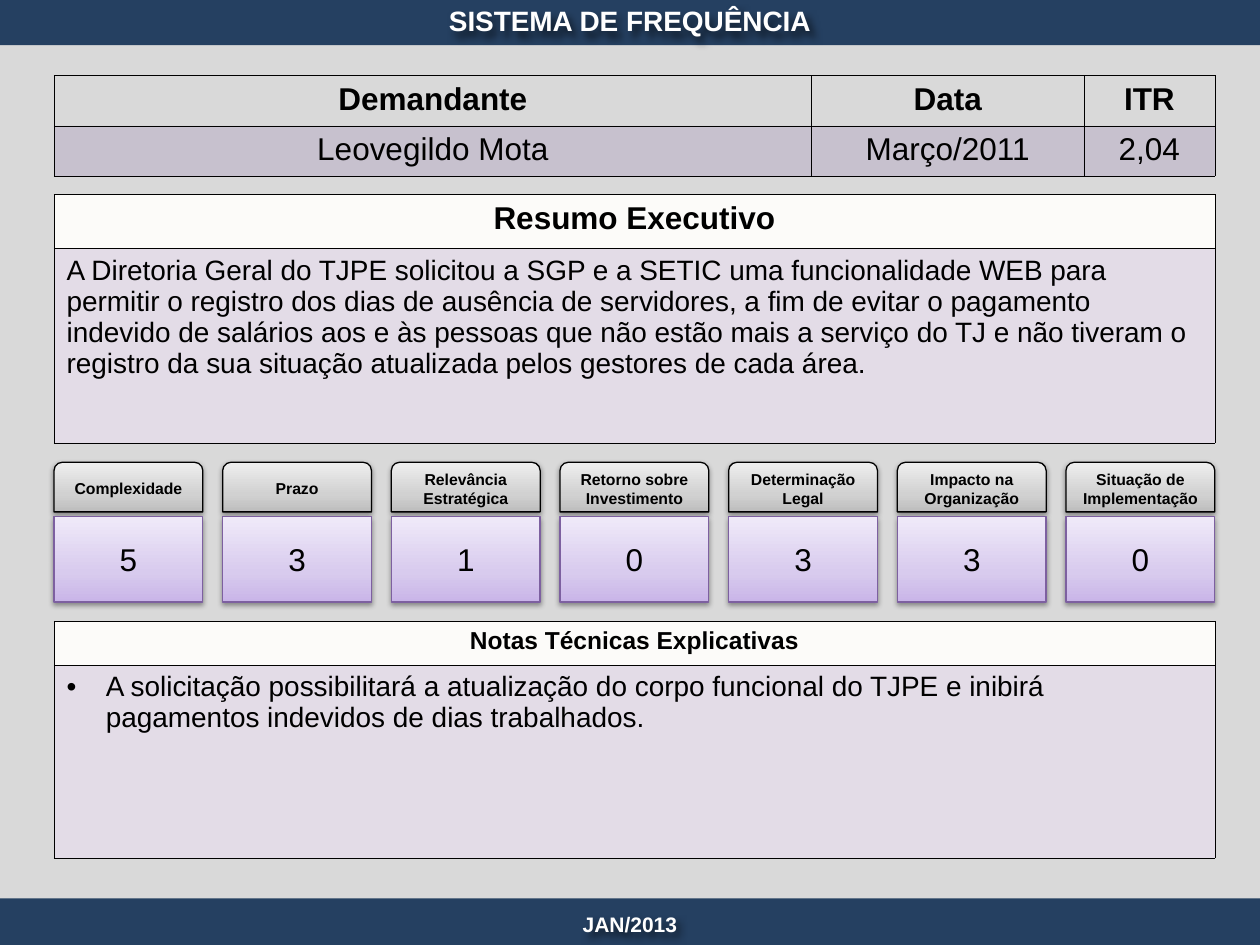
from dataclasses import dataclass

from lxml import etree
from pptx import Presentation
from pptx import util as u
from pptx.dml import color
from pptx.enum import shapes, text
from pptx.oxml import ns


@dataclass(frozen=True)
class Theme:
    font: str = "Arial"
    bar: str = "254061"
    page: str = "D9D9D9"
    panel: str = "FCFBF9"
    ink: str = "000000"
    light: str = "FFFFFF"
    tint: str = "8064A2"
    score_line: str = "7D60A0"
    label_stops: tuple = ((0, "BDBDBD"), (35, "D1D1D1"), (100, "EEEEEE"))
    score_stops: tuple = ((0, "C9B5E8"), (35, "D8CBEE"), (100, "F0EAF9"))
    heading: int = 18
    body: int = 16
    subheading: int = 14
    footer: int = 12
    label: int = 9


T = Theme()
LEFT, WIDTH = 1.09, 23.4
SUMMARY = (
    "A Diretoria Geral do TJPE solicitou a SGP e a SETIC uma funcionalidade WEB "
    "para permitir o registro dos dias de ausência de servidores, a fim de evitar "
    "o pagamento indevido de salários aos e às pessoas que não estão mais a "
    "serviço do TJ e não tiveram o registro da sua situação atualizada pelos "
    "gestores de cada área."
)
NOTE = (
    "A solicitação possibilitará a atualização do corpo funcional do TJPE e "
    "inibirá pagamentos indevidos de dias trabalhados."
)
SCORES = [
    ("Complexidade", "5"),
    ("Prazo", "3"),
    ("Relevância Estratégica", "1"),
    ("Retorno sobre Investimento", "0"),
    ("Determinação Legal", "3"),
    ("Impacto na Organização", "3"),
    ("Situação de Implementação", "0"),
]


def rgb(value):
    return color.RGBColor.from_string(value)


def sub(parent, tag, **attrs):
    el = etree.SubElement(parent, ns.qn(tag))
    for name, value in attrs.items():
        el.set(name, str(value))
    return el


def write(tf, content, size, ink=T.ink, bold=False, centred=True, bullet=False):
    p = tf.paragraphs[0]
    p.alignment = text.PP_ALIGN.CENTER if centred else text.PP_ALIGN.LEFT
    if bullet:
        pPr = p._p.get_or_add_pPr()
        pPr.set("marL", str(u.Cm(0.79)))
        pPr.set("indent", str(u.Cm(-0.79)))
        sub(pPr, "a:buFont", typeface=T.font)
        sub(pPr, "a:buChar", char="•")
    r = p.add_run()
    r.text = content
    r.font.color.rgb = rgb(ink)
    for name, value in {"name": T.font, "size": u.Pt(size), "bold": bold}.items():
        setattr(r.font, name, value)


def add_shadow(s, blur, dist, angle, opacity):
    s.shadow.inherit = False
    effects = s._element.spPr.find(ns.qn("a:effectLst"))
    shadow = sub(effects, "a:outerShdw", blurRad=u.Pt(blur), dist=u.Pt(dist),
                 dir=angle * 60000, algn="t", rotWithShape=0)
    sub(sub(shadow, "a:srgbClr", val="000000"), "a:alpha", val=opacity * 1000)


def add_rect(slide, left, top, width, height, fill):
    s = slide.shapes.add_shape(shapes.MSO_SHAPE.RECTANGLE, *map(u.Cm, (left, top, width, height)))
    s.shadow.inherit = False
    s.fill.solid()
    s.fill.fore_color.rgb = rgb(fill)
    s.line.fill.background()


def add_bar_text(slide, top, content, size):
    s = slide.shapes.add_textbox(*map(u.Cm, (0, top, 25.4, 0.84)))
    tf = s.text_frame
    settings = {"word_wrap": True, "vertical_anchor": text.MSO_ANCHOR.MIDDLE,
                "margin_top": 0, "margin_bottom": 0}
    for name, value in settings.items():
        setattr(tf, name, value)
    write(tf, content, size, T.light, bold=True)
    add_shadow(s, 4, 3, 45, 60)


def add_card(slide, kind, left, top, height, stops, line, content, size, bold):
    s = slide.shapes.add_shape(kind, *map(u.Cm, (left, top, 3, height)))
    s.fill.gradient()
    s.fill.gradient_angle = 90
    gs_list = s._element.spPr.find(ns.qn("a:gradFill")).find(ns.qn("a:gsLst"))
    for stop in list(gs_list):
        gs_list.remove(stop)
    for position, value in stops:
        sub(sub(gs_list, "a:gs", pos=position * 1000), "a:srgbClr", val=value)
    s.line.color.rgb = rgb(line)
    s.line.width = u.Pt(0.75)
    add_shadow(s, 3.1, 1.6, 90, 38)
    s.text_frame.word_wrap = True
    s.text_frame.vertical_anchor = text.MSO_ANCHOR.MIDDLE
    write(s.text_frame, content, size, bold=bold)


def style_cell(cell, tinted):
    tcPr = cell._tc.get_or_add_tcPr()
    for side in ("a:lnL", "a:lnR", "a:lnT", "a:lnB"):
        ln = sub(tcPr, side, w=u.Pt(0.25))
        sub(sub(ln, "a:solidFill"), "a:srgbClr", val=T.ink)
    if tinted:
        cell.fill.solid()
        cell.fill.fore_color.rgb = rgb(T.tint)
        clr = tcPr.find(ns.qn("a:solidFill")).find(ns.qn("a:srgbClr"))
        sub(clr, "a:alpha", val=20000)
    else:
        cell.fill.background()


def add_grid(slide, top, cols, rows, headings, values, heading_size, value_size, **layout):
    frame = slide.shapes.add_table(
        2, len(cols), *map(u.Cm, (LEFT, top, sum(cols), sum(rows))))
    table = frame.table
    table.first_row = table.horz_banding = False
    for column, width in zip(table.columns, cols):
        column.width = u.Cm(width)
    for row, height in zip(table.rows, rows):
        row.height = u.Cm(height)
    for i, (heading, value) in enumerate(zip(headings, values)):
        style_cell(table.cell(0, i), False)
        write(table.cell(0, i).text_frame, heading, heading_size, bold=True)
        style_cell(table.cell(1, i), True)
        write(table.cell(1, i).text_frame, value, value_size, **layout)


def add_panel(slide, top, rows, heading, body, heading_size, bullet=False):
    add_rect(slide, LEFT, top, WIDTH, sum(rows), T.panel)
    add_grid(slide, top, [WIDTH], rows, [heading], [body], heading_size, T.body,
             centred=False, bullet=bullet)


def add_scores(slide):
    for i, (label, score) in enumerate(SCORES):
        left = LEFT + i * 3.4
        add_card(slide, shapes.MSO_SHAPE.ROUND_2_SAME_RECTANGLE, left, 9.32, 1,
                 T.label_stops, T.ink, label, T.label, True)
        add_card(slide, shapes.MSO_SHAPE.RECTANGLE, left, 10.41, 1.73,
                 T.score_stops, T.score_line, score, T.heading, False)


def main():
    prs = Presentation()
    prs.slide_width, prs.slide_height = u.Cm(25.4), u.Cm(19.05)
    slide = prs.slides.add_slide(prs.slide_layouts[6])
    add_rect(slide, 0, 0.91, 25.4, 17.4, T.page)
    add_rect(slide, 0, 18.11, 25.4, 0.94, T.bar)
    add_rect(slide, 0, 0, 25.4, 0.91, T.bar)
    add_bar_text(slide, 18.21, "JAN/2013", T.footer)
    add_bar_text(slide, 0, "SISTEMA DE FREQUÊNCIA", T.body)
    add_grid(slide, 1.52, [15.27, 5.49, 2.64], [1.01, 1.01],
             ["Demandante", "Data", "ITR"],
             ["Leovegildo Mota", "Março/2011", "2,04"], T.heading, T.heading)
    add_panel(slide, 3.92, [1.09, 3.92], "Resumo Executivo", SUMMARY, T.heading)
    add_panel(slide, 12.52, [0.89, 3.89], "Notas Técnicas Explicativas", NOTE,
              T.subheading, bullet=True)
    add_scores(slide)
    prs.save("out.pptx")


if __name__ == "__main__":
    main()
